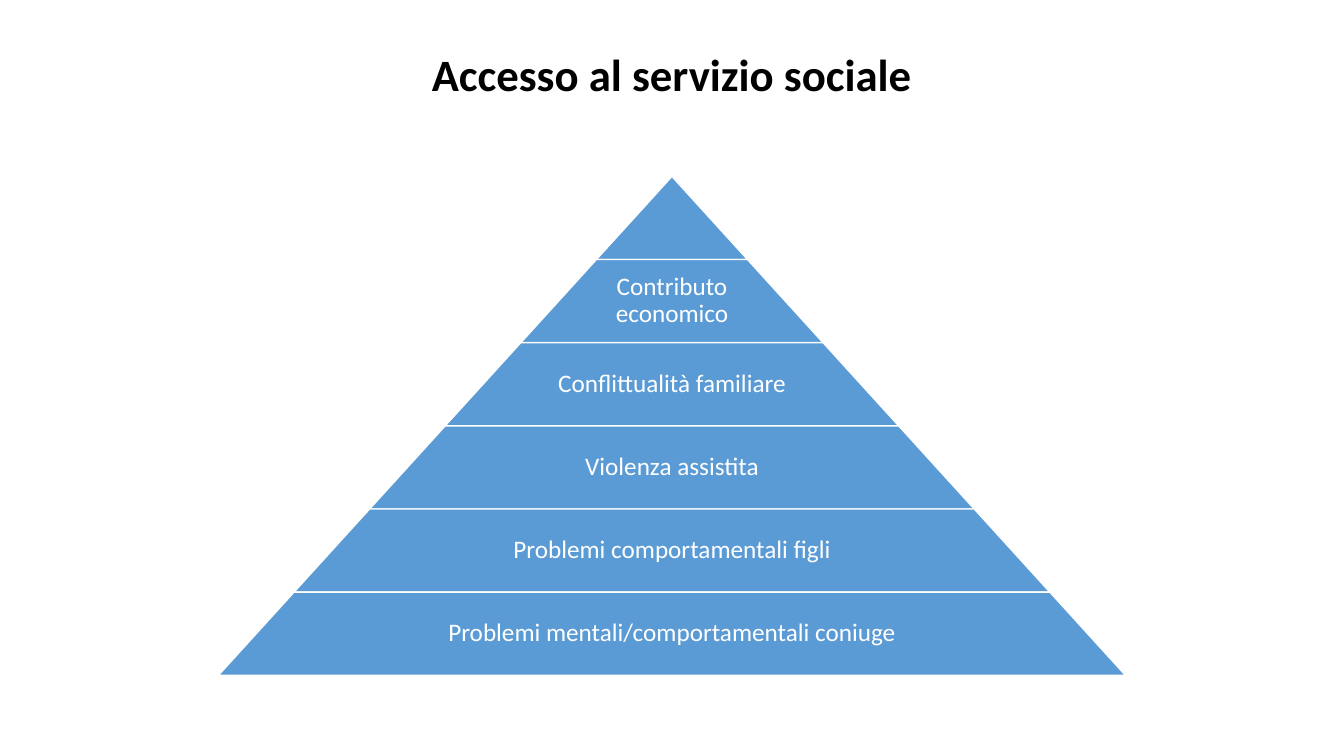
from pptx import Presentation
from pptx.dml.color import RGBColor
from pptx.enum.shapes import MSO_SHAPE
from pptx.enum.text import MSO_ANCHOR, PP_ALIGN
from pptx.util import Pt

TITLE = "Accesso al servizio sociale"
LEVELS = [
    "",
    "Contributo economico",
    "Conflittualità familiare",
    "Violenza assistita",
    "Problemi comportamentali figli",
    "Problemi mentali/comportamentali coniuge",
]
BLUE, WHITE, BLACK = "5B9BD5", "FFFFFF", "000000"
WIDE, HIGH = 960, 540
MID = WIDE / 2
TOP, STEP = 126, 59.4
SLOPE = 54  # widening of each level on either side
SHARE = 0.65  # part of a level's width given to its label


def color(code):
    return RGBColor.from_string(code)


def add_text(slide, text, top, width, height, size=18, ink=WHITE, bold=False, inset=2):
    """Add a text box centred on the slide's vertical axis."""
    box = slide.shapes.add_textbox(Pt(MID - width / 2), Pt(top), Pt(width), Pt(height))
    frame = box.text_frame
    frame.word_wrap = True
    frame.vertical_anchor = MSO_ANCHOR.MIDDLE
    frame.margin_left = frame.margin_right = Pt(inset)
    frame.margin_top = frame.margin_bottom = Pt(inset)
    line = frame.paragraphs[0]
    line.alignment = PP_ALIGN.CENTER
    line.line_spacing = 0.9
    run = line.add_run()
    run.text = text
    run.font.name = "Calibri"
    run.font.size = Pt(size)
    run.font.bold = bold
    run.font.color.rgb = color(ink)


def add_level(slide, top, width):
    band = slide.shapes.add_shape(
        MSO_SHAPE.TRAPEZOID, Pt(MID - width / 2), Pt(top), Pt(width), Pt(STEP))
    band.adjustments[0] = SLOPE / STEP
    band.shadow.inherit = False
    band.fill.solid()
    band.fill.fore_color.rgb = color(BLUE)
    band.line.color.rgb = color(WHITE)
    band.line.width = Pt(1)


def main():
    deck = Presentation()
    deck.slide_width, deck.slide_height = Pt(WIDE), Pt(HIGH)
    slide = deck.slides.add_slide(deck.slide_layouts[6])
    add_text(slide, TITLE, 21.6, 648, 67, size=32, ink=BLACK, bold=True, inset=4)
    for row, label in enumerate(LEVELS):
        top, width = TOP + row * STEP, 2 * SLOPE * (row + 1)
        add_level(slide, top, width)
        if label:
            add_text(slide, label, top, width * SHARE, STEP)
    deck.save("out.pptx")


if __name__ == "__main__":
    main()
